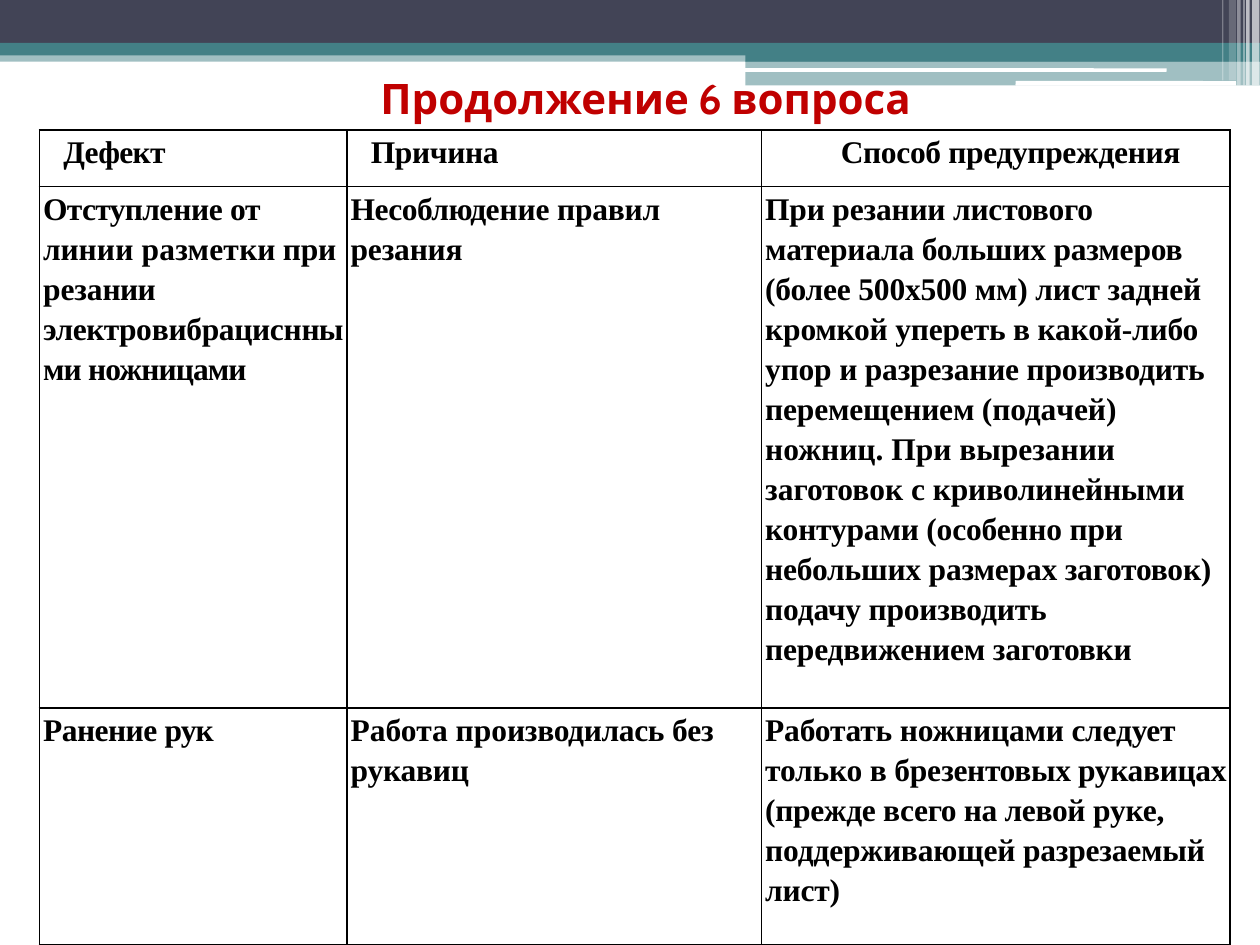
import pptx
import pptx.dml.color
import pptx.enum.shapes
import pptx.enum.text
import pptx.oxml
import pptx.oxml.ns
import pptx.util

Pt = pptx.util.Pt
RGBColor = pptx.dml.color.RGBColor
qn = pptx.oxml.ns.qn
SHAPE = pptx.enum.shapes.MSO_SHAPE

WHITE = RGBColor(0xFF, 0xFF, 0xFF)
BLACK = RGBColor(0, 0, 0)
SLATE = RGBColor(0x42, 0x44, 0x56)
TEAL = RGBColor(0x43, 0x80, 0x86)
RED = RGBColor(0xC0, 0, 0)

BANDS = [
    (0, 28.8, 720, 6.5, TEAL, 50),
    (0, 0, 720, 24.5, SLATE, 100),
    (0, 24.5, 720, 7.2, TEAL, 100),
    (426, 28, 294, 7.2, TEAL, 100),
    (426, 34.6, 294, 14.2, TEAL, 50),
]
GROOVES = [(425.5, 39, 241.2, 2), (580.3, 46.3, 126, 2.7)]
STRIPES = [
    (715.5, 4.2, 48.8, 65),
    (712.1, 2, 48.8, 65),
    (710.5, 0.7, 48.8, 60),
    (707, 2, 48.8, 40),
    (702.2, 4, 46, 20),
    (698.4, 0.7, 46, 30),
]

COLUMN_WIDTHS = [175.7, 236.9, 267.8]
ROW_HEIGHTS = [32.4, 297.4, 135.4]
HEADER_INDENTS = [11.5, 11.5, 43.2]
DEFECTS = [
    [
        [("Дефект", -0.4)],
        [("Причина", -0.2)],
        [("Способ предупреждения", -0.2)],
    ],
    [
        [("Отступле", -0.4), ("ние от ли", -0.2), ("нии размет", 0.1),
         ("ки при реза", -0.1), ("нии электро", -0.3),
         ("вибрацисн", -0.2), ("ными ножницами", -0.5)],
        [("Несоблюде", -0.3), ("ние правил резания", -0.1)],
        [("При резании листового материала больших размеров "
          "(более 500x500 мм) лист задней кромкой упереть в какой-либо "
          "упор и разрезание производить перемещением (пода", -0.1),
         ("чей) ножниц. При вырезании заготовок с ", 0),
         ("криволинейными контурами (особенно при небольших размерах "
          "заготовок) подачу производить передвижением заготовки", -0.1)],
    ],
    [
        [("Ранение ", -0.3), ("рук", -0.5)],
        [("Работа про", 0), ("изводилась ", -0.2), ("без рукавиц", -0.1)],
        [("Работать ножницами следует только в бре", -0.1),
         ("зентовых рукавицах (прежде всего на левой ", -0.2),
         ("руке, поддерживающей разрезаемый лист)", -0.1)],
    ],
]


def apply_format(target, values):
    """Set each attribute in a dict of format values."""
    for attribute, value in values.items():
        setattr(target, attribute, value)


def add_bar(slide, box, color, opacity=100, kind=SHAPE.RECTANGLE):
    """Add one borderless bar with the given opacity in percent."""
    bar = slide.shapes.add_shape(kind, *map(Pt, box))
    bar.shadow.inherit = False
    bar.line.fill.background()
    bar.fill.solid()
    bar.fill.fore_color.rgb = color
    if opacity < 100:
        tint = bar.fill._xPr.find(qn("a:solidFill"))[0]
        pptx.oxml.ns.nsdecls("a")
        alpha = pptx.oxml.parse_xml(
            f'<a:alpha {pptx.oxml.ns.nsdecls("a")} val="{opacity * 1000}"/>')
        tint.append(alpha)


def add_banner(slide, left, top):
    """Draw the layered bands, grooves and stripes from a corner."""
    for x, y, width, height, color, opacity in BANDS:
        add_bar(slide, (left + x, top + y, width, height), color, opacity)
    for x, y, width, height in GROOVES:
        add_bar(slide, (left + x, top + y, width, height), WHITE,
                kind=SHAPE.ROUNDED_RECTANGLE)
    for x, width, height, opacity in STRIPES:
        add_bar(slide, (left + x, top, width, height), WHITE, opacity)


def add_title(slide, left, top, width, height):
    """Add the centred heading."""
    frame = slide.shapes.add_textbox(
        *map(Pt, (left, top, width, height))).text_frame
    apply_format(frame, {
        "word_wrap": True, "margin_top": 0, "margin_bottom": 0,
        "vertical_anchor": pptx.enum.text.MSO_ANCHOR.MIDDLE})
    heading = frame.paragraphs[0]
    heading.alignment = pptx.enum.text.PP_ALIGN.CENTER
    run = heading.add_run()
    run.text = "Продолжение 6 вопроса"
    apply_format(run.font, {"name": "Cabin", "size": Pt(24), "bold": True})
    run.font.color.rgb = RED


def add_borders(cell):
    """Give a cell a thin black line on every side."""
    properties = cell._tc.get_or_add_tcPr()
    for position, side in enumerate(("lnL", "lnR", "lnT", "lnB")):
        properties.insert(position, pptx.oxml.parse_xml(
            f'<a:{side} {pptx.oxml.ns.nsdecls("a")} w="{Pt(1)}">'
            f'<a:solidFill><a:srgbClr val="{BLACK}"/></a:solidFill>'
            f'</a:{side}>'))


def fill_cell(cell, pieces, indent):
    """Write letter-spaced pieces of text into a cell."""
    apply_format(cell, {"margin_left": Pt(2.2), "margin_right": Pt(2.2),
                        "margin_top": 0, "margin_bottom": 0})
    cell.fill.solid()
    cell.fill.fore_color.rgb = WHITE
    add_borders(cell)
    paragraph = cell.text_frame.paragraphs[0]
    paragraph.line_spacing = 1.15
    paragraph._p.get_or_add_pPr().set("marL", str(Pt(indent)))
    for text, spacing in pieces:
        run = paragraph.add_run()
        run.text = text
        apply_format(run.font, {
            "name": "Times New Roman", "size": Pt(18), "bold": True})
        run.font.color.rgb = BLACK
        run._r.get_or_add_rPr().set("spc", str(round(spacing * 100)))


def add_defect_table(slide, left, top):
    """Add the table of defects, causes and prevention."""
    table = slide.shapes.add_table(
        len(ROW_HEIGHTS), len(COLUMN_WIDTHS), Pt(left), Pt(top),
        Pt(sum(COLUMN_WIDTHS)), Pt(sum(ROW_HEIGHTS))).table
    apply_format(table, {"first_row": False, "horz_banding": False})
    for column, width in zip(table.columns, COLUMN_WIDTHS):
        column.width = Pt(width)
    for row_index, (row, height) in enumerate(zip(table.rows, ROW_HEIGHTS)):
        row.height = Pt(height)
        indents = HEADER_INDENTS if row_index == 0 else [0] * len(COLUMN_WIDTHS)
        for cell, pieces, indent in zip(row.cells, DEFECTS[row_index], indents):
            fill_cell(cell, pieces, indent)


def main():
    """Build and save the slide."""
    deck = pptx.Presentation()
    apply_format(deck, {"slide_width": Pt(720), "slide_height": Pt(540)})
    slide = deck.slides.add_slide(deck.slide_layouts[6])
    add_banner(slide, 0, 0)
    add_title(slide, 45, 40, 648, 32)
    add_defect_table(slide, 22.5, 74.3)
    deck.save("out.pptx")


if __name__ == "__main__":
    main()
